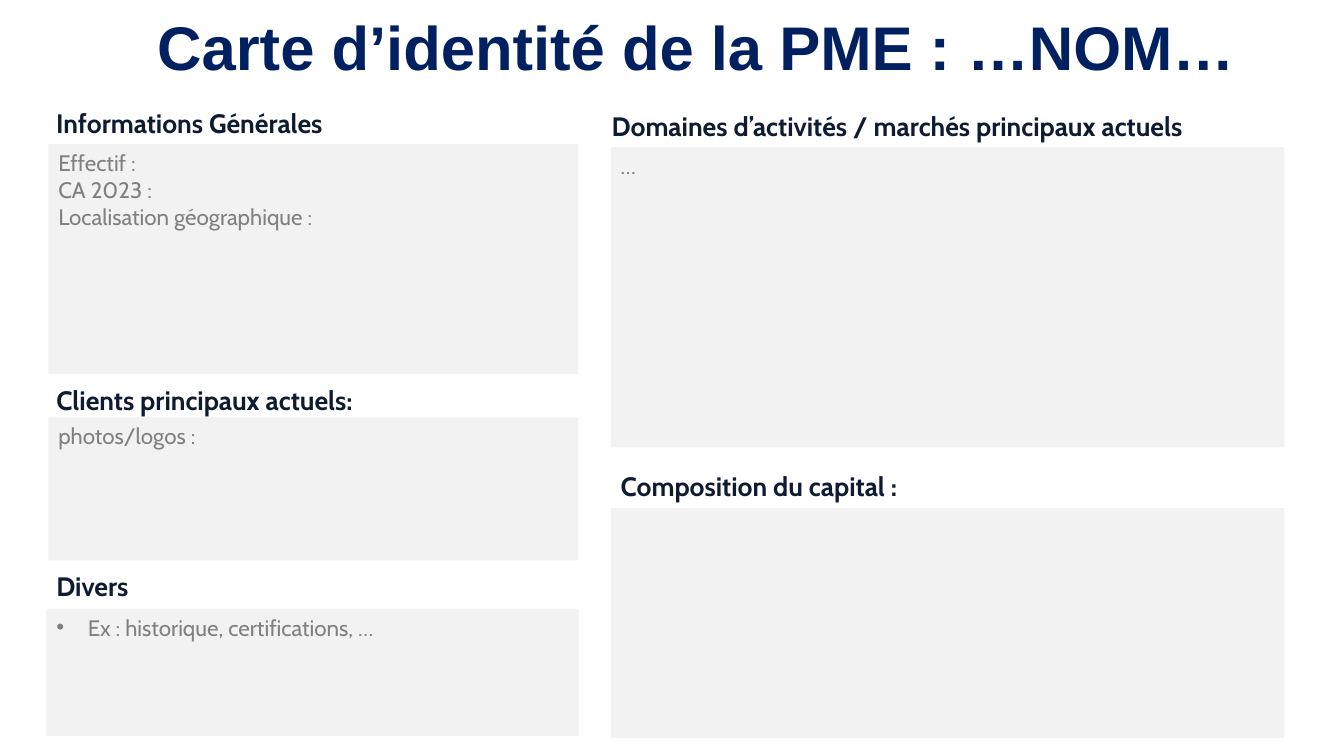
"""Build the identity card slide of an SME."""
from dataclasses import dataclass

from lxml.etree import SubElement
from pptx import Presentation
from pptx.dml.color import RGBColor
from pptx.enum.shapes import MSO_SHAPE
from pptx.enum.text import MSO_ANCHOR, PP_ALIGN
from pptx.oxml.ns import qn
from pptx.shapes.autoshape import Shape
from pptx.slide import Slide
from pptx.text.text import TextFrame, _Paragraph
from pptx.util import Pt

NAVY, INK, GREY, PANEL = "002060", "0E1B31", "808080", "F2F2F2"
BULLET_INDENT = 22.5


@dataclass(frozen=True)
class Box:
    left: float
    top: float
    width: float
    height: float

    def lengths(self) -> tuple[Pt, Pt, Pt, Pt]:
        return Pt(self.left), Pt(self.top), Pt(self.width), Pt(self.height)


@dataclass(frozen=True)
class Section:
    heading: str
    heading_box: Box
    panel_box: Box
    lines: tuple[str, ...] = ()
    bulleted: bool = False
    align: PP_ALIGN = PP_ALIGN.JUSTIFY
    wrap: bool = True


SECTIONS = (
    Section("Informations Générales", Box(33.12, 72.72, 421.92, 30.24),
            Box(34.56, 102.96, 378.72, 164.16),
            ("Effectif :", "CA 2023 :", "Localisation géographique :")),
    Section("Clients principaux actuels:", Box(33.12, 270.72, 265.68, 30.24),
            Box(34.56, 298.08, 378.72, 102.24), ("photos/logos :",),
            align=PP_ALIGN.LEFT),
    Section("Divers", Box(33.12, 403.92, 144.72, 30.96),
            Box(33.12, 434.88, 380.16, 90.72),
            ("Ex : historique, certifications, …",), bulleted=True),
    Section("Domaines d’activités / marchés principaux actuels",
            Box(429.84, 74.88, 487.44, 30.24),
            Box(436.32, 105.12, 480.96, 214.56), ("…",)),
    Section("Composition du capital :", Box(436.32, 331.92, 239.04, 30.24),
            Box(436.32, 362.88, 480.96, 164.16), wrap=False),
)


def rgb(value: str) -> RGBColor:
    return RGBColor.from_string(value)


def add_bullet(paragraph: _Paragraph) -> None:
    properties = paragraph._p.get_or_add_pPr()
    properties.set("marL", str(Pt(BULLET_INDENT)))
    properties.set("indent", str(-Pt(BULLET_INDENT)))
    SubElement(properties, qn("a:buFont")).set("typeface", "Arial")
    SubElement(properties, qn("a:buChar")).set("char", "•")


def write(frame: TextFrame, *lines: str, size: float, color: str,
          font: str = "Cabin", bold: bool = False,
          align: PP_ALIGN = PP_ALIGN.LEFT, spacing: float = 1.0,
          bulleted: bool = False, wrap: bool = True) -> None:
    frame.word_wrap = wrap
    frame.vertical_anchor = MSO_ANCHOR.TOP
    for index, line in enumerate(lines):
        paragraph = frame.add_paragraph() if index else frame.paragraphs[0]
        paragraph.alignment = align
        paragraph.line_spacing = spacing
        if bulleted:
            add_bullet(paragraph)
        run = paragraph.add_run()
        run.text = line
        run.font.name = font
        run.font.size = Pt(size)
        run.font.bold = bold
        run.font.color.rgb = rgb(color)


def add_panel(slide: Slide, box: Box) -> Shape:
    panel = slide.shapes.add_shape(MSO_SHAPE.RECTANGLE, *box.lengths())
    panel.shadow.inherit = False
    panel.fill.solid()
    panel.fill.fore_color.rgb = rgb(PANEL)
    panel.line.fill.background()
    return panel


def add_section(slide: Slide, section: Section) -> None:
    panel = add_panel(slide, section.panel_box)
    write(panel.text_frame, *section.lines, size=16, color=GREY,
          align=section.align, bulleted=section.bulleted)
    heading = slide.shapes.add_textbox(*section.heading_box.lengths())
    write(heading.text_frame, section.heading, size=19, color=INK, bold=True,
          wrap=section.wrap)


def main() -> None:
    presentation = Presentation()
    presentation.slide_width = Pt(960)
    presentation.slide_height = Pt(540)
    slide = presentation.slides.add_slide(presentation.slide_layouts[6])
    title = slide.shapes.add_textbox(*Box(105.12, 8.64, 799.92, 88.56).lengths())
    write(title.text_frame, "Carte d’identité de la PME : …NOM…", size=44,
          color=NAVY, font="Arial", bold=True, spacing=0.9)
    for section in SECTIONS:
        add_section(slide, section)
    presentation.save("out.pptx")


if __name__ == "__main__":
    main()
